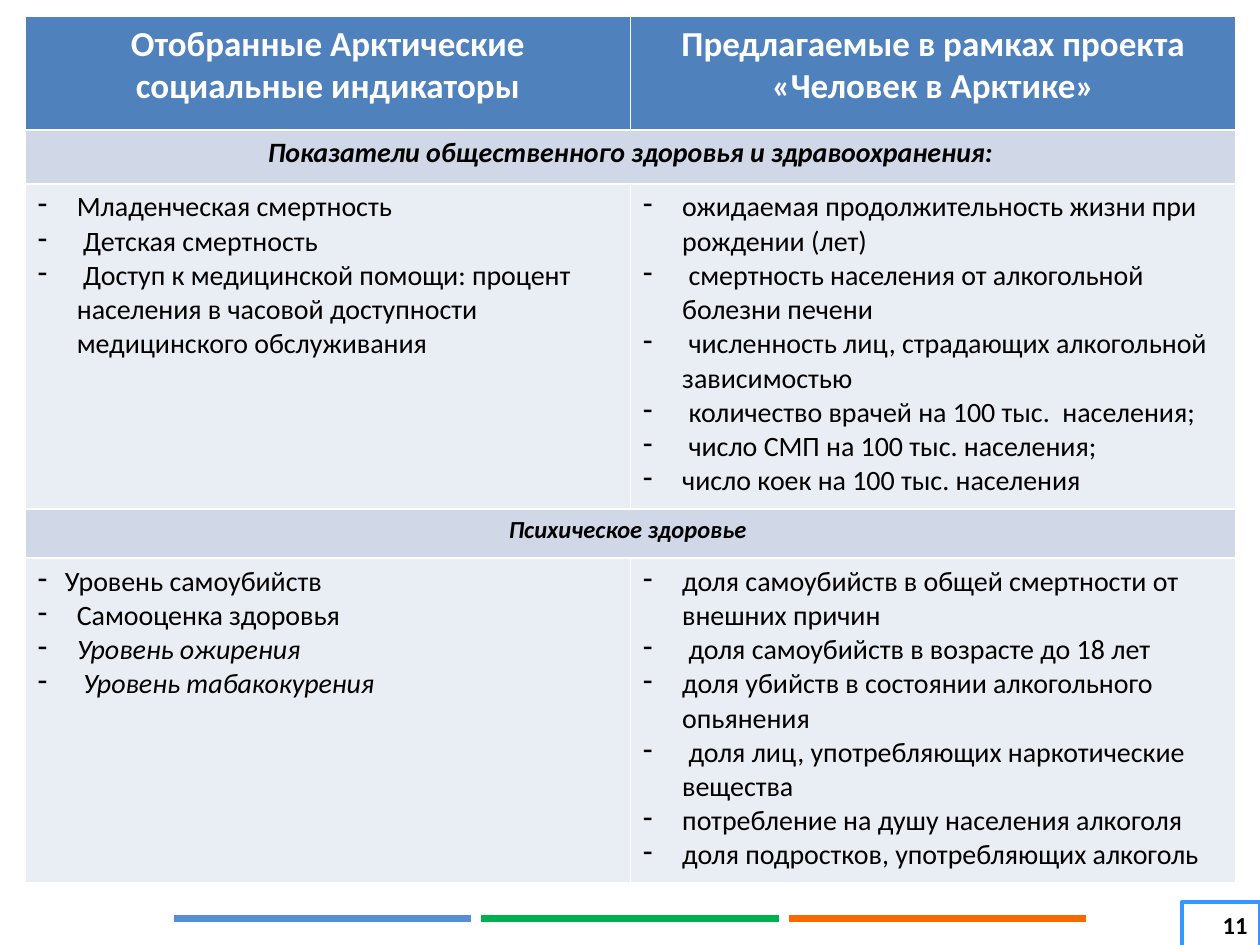
from lxml import etree
from pptx import Presentation
from pptx.dml.color import RGBColor
from pptx.enum.shapes import MSO_CONNECTOR, MSO_SHAPE
from pptx.enum.text import MSO_ANCHOR, PP_ALIGN
from pptx.oxml.ns import qn
from pptx.util import Inches, Pt

STRAIGHT = MSO_CONNECTOR.STRAIGHT
RECT = MSO_SHAPE.RECTANGLE
MIDDLE = MSO_ANCHOR.MIDDLE
LEFT, CENTER, RIGHT = PP_ALIGN.LEFT, PP_ALIGN.CENTER, PP_ALIGN.RIGHT
COLS, ROWS = 100, 75
INDENT, NARROW_INDENT = 3.1, 2.15

HEADERS = ["Отобранные Арктические социальные индикаторы",
           "Предлагаемые в рамках проекта «Человек в Арктике»"]
SECTIONS = [
    ("Показатели общественного здоровья и здравоохранения:", 16,
     [("Младенческая смертность", {}),
      (" Детская смертность", {}),
      (" Доступ к медицинской помощи: процент населения в часовой доступности "
       "медицинского обслуживания", {})],
     [("ожидаемая продолжительность жизни при рождении (лет)", {}),
      (" смертность населения от алкогольной болезни печени", {}),
      (" численность лиц, страдающих алкогольной зависимостью", {}),
      (" количество врачей на 100 тыс.  населения;", {}),
      (" число СМП на 100 тыс. населения;", {}),
      ("число коек на 100 тыс. населения", {})]),
    ("Психическое здоровье ", 14,
     [("Уровень самоубийств", {"indent": NARROW_INDENT}),
      ("Самооценка здоровья", {}),
      ("Уровень ожирения", {"italic": True}),
      (" Уровень табакокурения", {"italic": True})],
     [("доля самоубийств в общей смертности от внешних причин", {}),
      (" доля самоубийств в возрасте до 18 лет", {}),
      ("доля убийств в состоянии алкогольного опьянения", {}),
      (" доля лиц, употребляющих наркотические вещества", {}),
      ("потребление на душу населения алкоголя", {}),
      ("доля подростков, употребляющих алкоголь", {})]),
]
ROW_HEIGHTS = [9, 4.3, 25.8, 3.9, 25.8]


def color(value):
    """Turn a hex string into an RGB colour."""
    return RGBColor.from_string(value)


class Deck:
    """Hold the style and the current slide, measured on a 100 by 75 grid."""

    font = "Calibri"
    ink, white = "000000", "FFFFFF"
    head, band, body = "4F81BD", "D0D8E8", "E9EDF4"

    def __init__(self):
        """Start a presentation with one blank slide."""
        self.prs = Presentation()
        self.prs.slide_width, self.prs.slide_height = Inches(10), Inches(7.5)
        self.s = self.prs.slides.add_slide(self.prs.slide_layouts[6])

    def x(self, cols):
        """Convert grid columns to a length."""
        return int(self.prs.slide_width * cols / COLS)

    def y(self, rows):
        """Convert grid rows to a length."""
        return int(self.prs.slide_height * rows / ROWS)

    def add_text(self, p, text, size=16, ink=ink, bold=False, italic=False,
                 align=LEFT, indent=0):
        """Add one run to a paragraph, with a dash bullet if indented."""
        p.alignment = align
        if indent:
            pPr = p._p.get_or_add_pPr()
            pPr.set("marL", str(self.x(indent)))
            pPr.set("indent", str(-self.x(indent)))
            etree.SubElement(pPr, qn("a:buChar")).set("char", "-")
        r = p.add_run()
        r.text = text
        r.font.name, r.font.size = self.font, Pt(size)
        r.font.bold, r.font.italic = bold, italic
        r.font.color.rgb = color(ink)

    def line(self, x1, x2, y, ink, width):
        """Draw a horizontal line."""
        c = self.s.shapes.add_connector(
            STRAIGHT, self.x(x1), self.y(y), self.x(x2), self.y(y))
        c.line.color.rgb, c.line.width = color(ink), Pt(width)
        etree.SubElement(c._element.spPr, qn("a:effectLst"))

    def cell(self, cell, fill, items, **style):
        """Fill a table cell with colour and paragraphs."""
        cell.fill.solid()
        cell.fill.fore_color.rgb = color(fill)
        tf = cell.text_frame
        for i, (text, extra) in enumerate(items):
            p = tf.add_paragraph() if i else tf.paragraphs[0]
            self.add_text(p, text, **{**style, **extra})

    def table(self, x, y, w, heights, headers, sections):
        """Draw a table of merged section titles above paired lists."""
        t = self.s.shapes.add_table(
            len(heights), len(headers), self.x(x), self.y(y),
            self.x(w), self.y(sum(heights))).table
        t.horz_banding = False
        for row, height in zip(t.rows, heights):
            row.height = self.y(height)
        for i, header in enumerate(headers):
            self.cell(t.cell(0, i), self.head, [(header, {})], size=20,
                      ink=self.white, bold=True, align=CENTER)
        for n, (title, size, *lists) in enumerate(sections):
            top = 1 + 2 * n
            t.cell(top, 0).merge(t.cell(top, len(headers) - 1))
            self.cell(t.cell(top, 0), self.band, [(title, {})], size=size,
                      bold=True, italic=True, align=CENTER)
            for i, items in enumerate(lists):
                self.cell(t.cell(top + 1, i), self.body, items, indent=INDENT)

    def page_number(self, x, y, w, h, text, ink):
        """Draw the framed page number."""
        sp = self.s.shapes.add_shape(
            RECT, self.x(x), self.y(y), self.x(w), self.y(h))
        sp.shadow.inherit = False
        sp.fill.background()
        sp.line.color.rgb, sp.line.width = color(ink), Pt(2.25)
        tf = sp.text_frame
        tf.word_wrap, tf.vertical_anchor = True, MIDDLE
        self.add_text(tf.paragraphs[0], text, size=14, bold=True, align=RIGHT)


def main():
    """Build and save the slide."""
    deck = Deck()
    for i, ink in enumerate(["558ED5", "00B050", "FF6600"]):
        left = 13.8 + 24.4 * i
        deck.line(left, left + 23.6, 72.9, ink, 3.5)
    deck.table(2, 1.3, 96.1, ROW_HEIGHTS, HEADERS, SECTIONS)
    deck.page_number(93.8, 71.6, 6.2, 3.6, "11", "3399FF")
    deck.prs.save("out.pptx")


if __name__ == "__main__":
    main()
